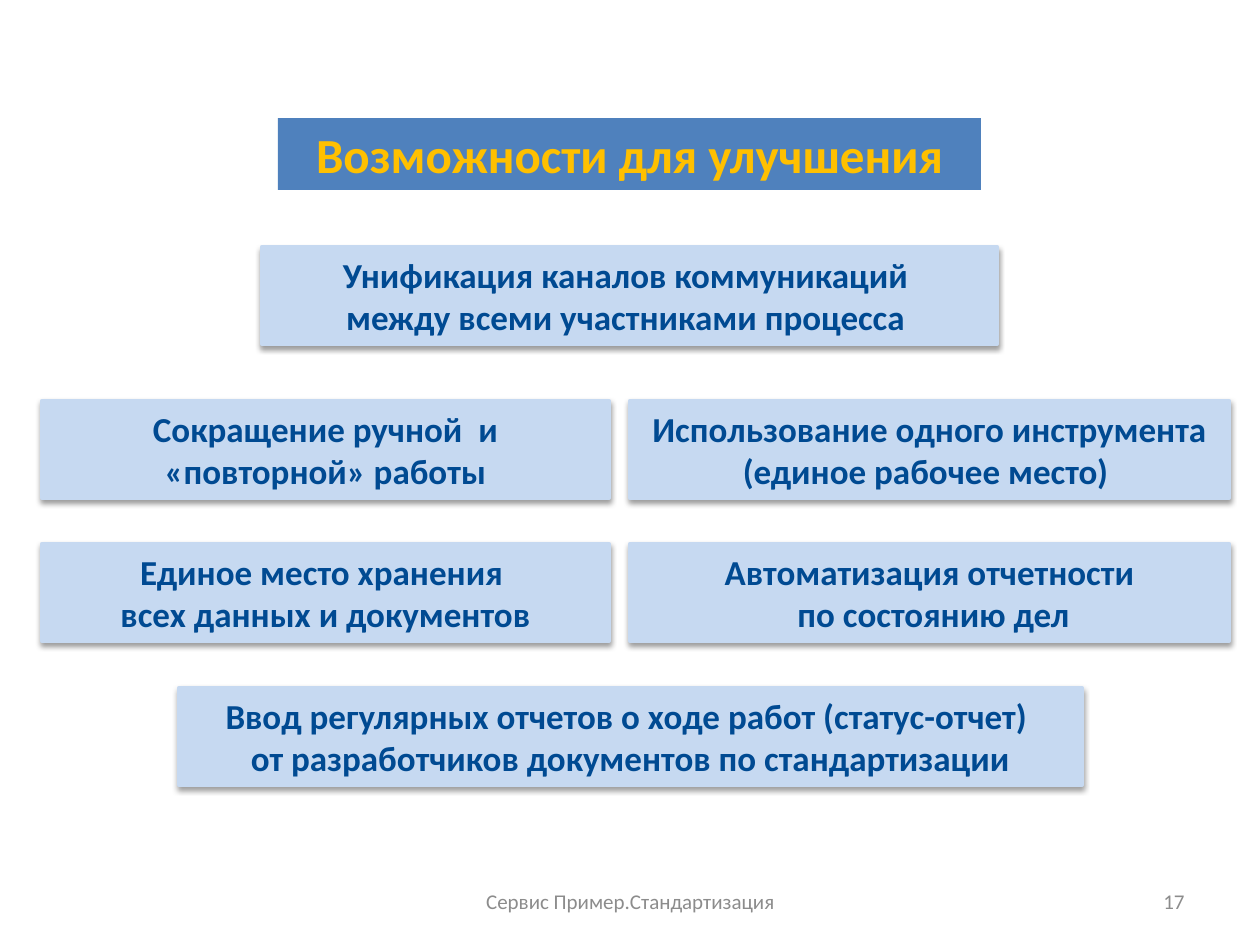
from lxml.etree import SubElement
from pptx import Presentation
from pptx.dml.color import RGBColor
from pptx.enum.shapes import MSO_SHAPE
from pptx.enum.text import MSO_ANCHOR as Anchor, MSO_AUTO_SIZE as AutoSize, PP_ALIGN as Align
from pptx.oxml.ns import qn
from pptx.util import Emu, Pt

PX_PER_INCH = 126
BOX_HEIGHT = 97
LEFT_COLUMN, RIGHT_COLUMN = (42, 567), (630, 599)
ROW_TOPS = (247, 401, 544, 688)

TITLE_FONT = {"size": Pt(28), "bold": True, "color": "FFC000"}
BOX_FONT = {"size": Pt(20), "bold": True, "color": "004A92"}
FOOTER_FONT = {"size": Pt(12), "bold": False, "color": "8C8C8C"}

# Row top, (left, width), text
IMPROVEMENTS = [
    (ROW_TOPS[0], (262, 735),
     "Унификация каналов коммуникаций \nмежду всеми участниками процесса "),
    (ROW_TOPS[1], LEFT_COLUMN, "Сокращение ручной  и «повторной» работы"),
    (ROW_TOPS[1], RIGHT_COLUMN,
     "Использование одного инструмента (единое рабочее место) "),
    (ROW_TOPS[2], LEFT_COLUMN, "Единое место хранения \nвсех данных и документов"),
    (ROW_TOPS[2], RIGHT_COLUMN, "Автоматизация отчетности\n по состоянию дел"),
    (ROW_TOPS[3], (179, 903),
     "Ввод регулярных отчетов о ходе работ (статус-отчет) \n"
     "от разработчиков документов по стандартизации"),
]


def px(*lengths):
    return [Emu(round(length * 914400 / PX_PER_INCH)) for length in lengths]


def rgb(value):
    return RGBColor.from_string(value)


def write(shape, text, style, anchor, align=Align.CENTER):
    frame = shape.text_frame
    frame.text = text
    frame.word_wrap = True
    frame.vertical_anchor = anchor
    for paragraph in frame.paragraphs:
        paragraph.alignment = align
        for run in paragraph.runs:
            run.font.name = "Calibri"
            for key, value in style.items():
                if key == "color":
                    run.font.color.rgb = rgb(value)
                else:
                    setattr(run.font, key, value)


def add_panel(slide, area, fill, text, style, anchor):
    panel = slide.shapes.add_shape(MSO_SHAPE.RECTANGLE, *px(*area))
    panel.shadow.inherit = False
    panel.fill.solid()
    panel.fill.fore_color.rgb = rgb(fill)
    panel.line.fill.background()
    write(panel, text, style, anchor)
    panel.text_frame.auto_size = AutoSize.SHAPE_TO_FIT_TEXT
    return panel


def add_shadow(shape):
    effects = shape._element.spPr.find(qn("a:effectLst"))
    shadow = SubElement(effects, qn("a:outerShdw"), blurRad="40000",
                        dist="20000", dir="5400000", rotWithShape="0")
    color = SubElement(shadow, qn("a:srgbClr"), val="000000")
    SubElement(color, qn("a:alpha"), val="38000")


def add_improvement(slide, top, column, text):
    left, width = column
    box = add_panel(slide, (left, top, width, BOX_HEIGHT), "C6D9F1",
                    text, BOX_FONT, Anchor.TOP)
    box.line.color.rgb = rgb("C6D9F1")
    box.line.width = Pt(2.5)
    add_shadow(box)


def add_footer(slide, left, width, text, align):
    footer = slide.shapes.add_textbox(*px(left, 876, width, 50))
    write(footer, text, FOOTER_FONT, Anchor.MIDDLE, align)


def main():
    deck = Presentation()
    deck.slide_width, deck.slide_height = px(1260, 945)
    slide = deck.slides.add_slide(deck.slide_layouts[6])

    # Title
    add_panel(slide, (278, 118, 703, 72), "4F81BD",
              "Возможности для улучшения", TITLE_FONT, Anchor.MIDDLE)

    # Improvement boxes
    for top, column, text in IMPROVEMENTS:
        add_improvement(slide, top, column, text)

    # Footer and slide number
    add_footer(slide, 431, 399, "Сервис Пример.Стандартизация", Align.CENTER)
    add_footer(slide, 903, 294, "17", Align.RIGHT)

    deck.save("out.pptx")


if __name__ == "__main__":
    main()
